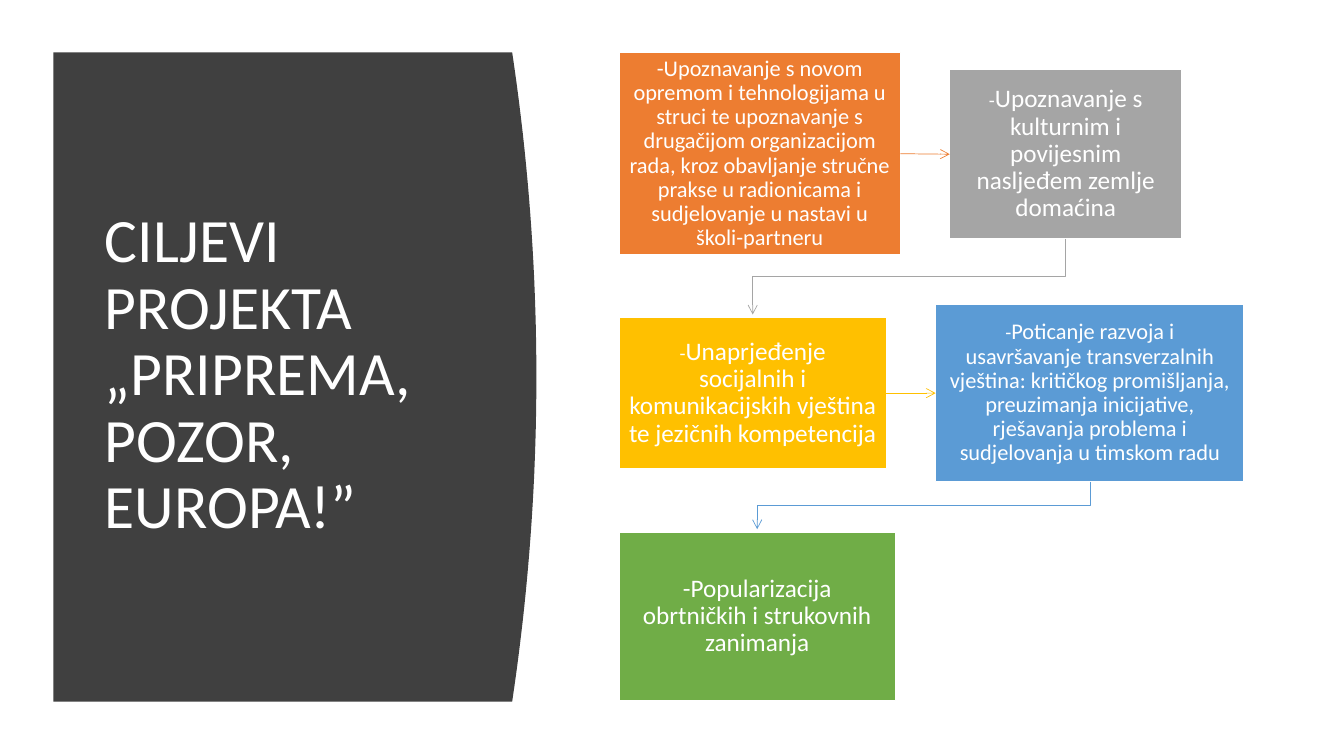
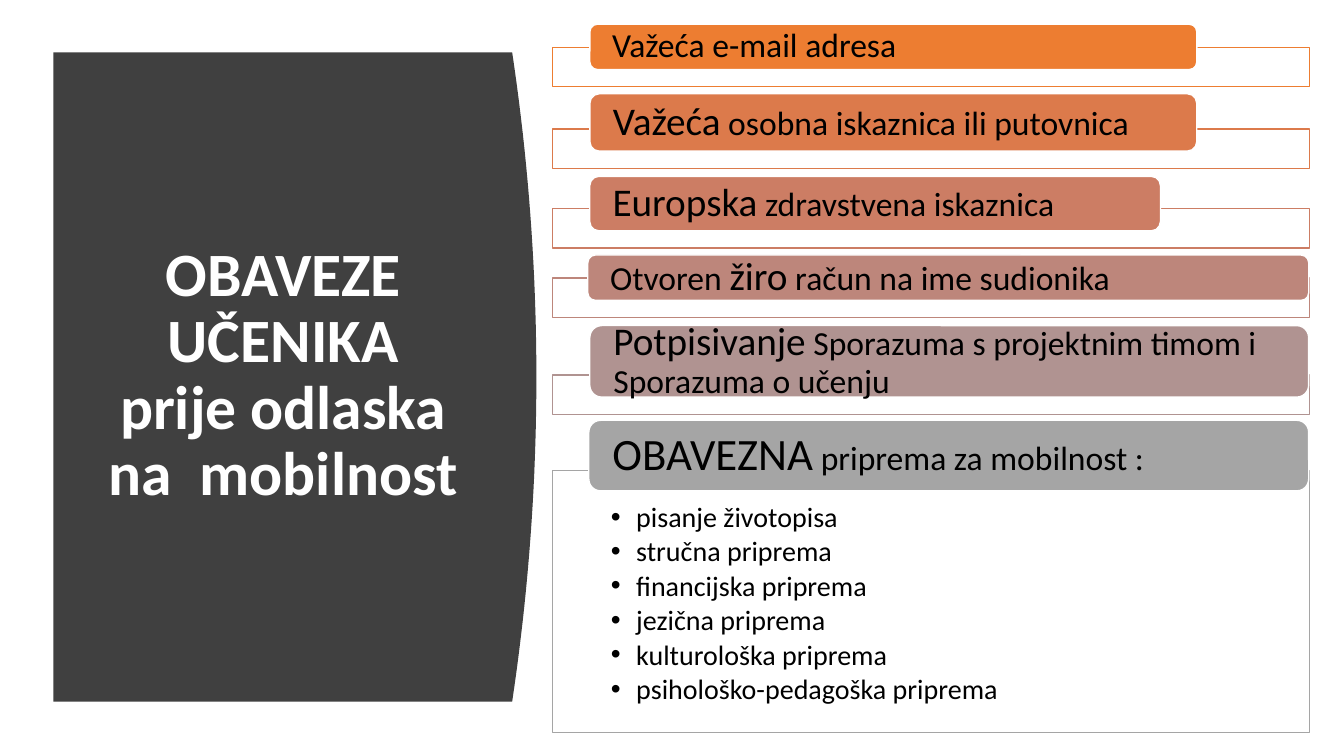
from pptx import Presentation
from pptx.dml.color import RGBColor
from pptx.enum.shapes import MSO_CONNECTOR, MSO_SHAPE
from pptx.enum.text import MSO_ANCHOR, MSO_AUTO_SIZE, PP_ALIGN
from pptx.oxml.ns import qn
from pptx.util import Inches, Pt
from lxml import etree

STRAIGHT, ELBOW = MSO_CONNECTOR.STRAIGHT, MSO_CONNECTOR.ELBOW
RECTANGLE, ROUNDED = MSO_SHAPE.RECTANGLE, MSO_SHAPE.ROUNDED_RECTANGLE
LEFT, CENTER = PP_ALIGN.LEFT, PP_ALIGN.CENTER
TOP, MIDDLE = MSO_ANCHOR.TOP, MSO_ANCHOR.MIDDLE
NO_AUTOFIT = MSO_AUTO_SIZE.NONE
SIDE_TOP, SIDE_LEFT, SIDE_BOTTOM, SIDE_RIGHT = range(4)

FONT = "Calibri"
WHITE, BLACK, CHARCOAL = "FFFFFF", "000000", "404040"
ORANGE, GREY, YELLOW, BLUE, GREEN = "ED7D31", "A5A5A5", "FFC000", "5B9BD5", "70AD47"

GOALS = [
    (ORANGE, (6.14, 0.52, 2.79, 2.01),
     [("-Upoznavanje s novom opremom i tehnologijama u struci te upoznavanje s drugačijom "
       "organizacijom rada, kroz obavljanje stručne prakse u radionicama i sudjelovanje "
       "u nastavi u školi-partneru", 16)]),
    (GREY, (9.42, 0.69, 2.3, 1.68),
     [("-", 14), ("Upoznavanje s kulturnim i povijesnim nasljeđem zemlje domaćina", 18)]),
    (YELLOW, (6.14, 3.15, 2.65, 1.5),
     [("-", 14), ("Unaprjeđenje socijalnih i komunikacijskih vještina te jezičnih "
                  "kompetencija", 18)]),
    (BLUE, (9.28, 3.02, 3.06, 1.76),
     [("-", 14), ("Poticanje razvoja i usavršavanje transverzalnih vještina: kritičkog "
                  "promišljanja, preuzimanja inicijative, rješavanja problema i "
                  "sudjelovanja u timskom radu", 16)]),
    (GREEN, (6.14, 5.28, 2.74, 1.67),
     [("-Popularizacija obrtničkih i strukovnih zanimanja", 18)]),
]

FRAME_LEFT, FRAME_WIDTH, FRAME_HEIGHT = 5.48, 7.51, 0.39
DUTIES = [
    (ORANGE, 0.47, (5.85, 0.24, 6.02, 0.45), [("Važeća e-mail adresa", 24)]),
    ("DC7A4B", 1.28, (5.85, 0.93, 6.02, 0.57),
     [("Važeća", 28), (" osobna iskaznica ili putovnica", 24)]),
    ("CC7D64", 2.07, (5.85, 1.75, 5.66, 0.54),
     [("Europska", 28), (" zdravstvena iskaznica", 24)]),
    ("BD867B", 2.76, (5.83, 2.53, 7.15, 0.45),
     [("Otvoren ", 24), ("žiro", 28), (" račun na ime sudionika", 24)]),
    ("B09391", 3.72, (5.85, 3.23, 7.13, 0.71),
     [("Potpisivanje", 28), (" Sporazuma s projektnim timom i Sporazuma o učenju", 24)]),
]
PREPARATION_HEADER = (5.84, 4.17, 7.14, 0.7)
PREPARATION_FRAME = (FRAME_LEFT, 4.67, FRAME_WIDTH, 2.6)
PREPARATIONS = ["pisanje životopisa", "stručna priprema", "financijska priprema",
                "jezična priprema", "kulturološka priprema", "psihološko-pedagoška priprema"]


def color(hex_code):
    """Turn a hex string into a colour."""
    return RGBColor.from_string(hex_code)


def place(shape, box):
    """Move and size a shape to a box in inches."""
    shape.left, shape.top, shape.width, shape.height = map(Inches, box)


def set_frame(shape, anchor, margins):
    """Set wrapping, anchor and margins of a shape's text and return its frame."""
    frame = shape.text_frame
    frame.word_wrap = True
    frame.auto_size = NO_AUTOFIT
    frame.vertical_anchor = anchor
    (frame.margin_left, frame.margin_top,
     frame.margin_right, frame.margin_bottom) = map(Inches, margins)
    return frame


def format_paragraph(paragraph, alignment, space_after=0):
    """Set alignment and spacing of a paragraph."""
    paragraph.alignment = alignment
    paragraph.line_spacing = 0.9
    paragraph.space_before = Pt(0)
    paragraph.space_after = Pt(space_after)


def add_run(paragraph, text, size, hex_code, bold=False):
    """Add one formatted run."""
    run = paragraph.add_run()
    run.text = text
    run.font.name, run.font.size, run.font.bold = FONT, Pt(size), bold
    run.font.color.rgb = color(hex_code)


def add_block(slide, kind, box, fill, line):
    """Add a filled and outlined preset shape."""
    shape = slide.shapes.add_shape(kind, *map(Inches, box))
    shape.shadow.inherit = False
    shape.fill.solid()
    shape.fill.fore_color.rgb = color(fill)
    shape.line.color.rgb = color(line)
    shape.line.width = Pt(1)
    return shape


def add_text_block(slide, kind, box, fill, runs, hex_code, alignment, margins):
    """Add a white-edged block with one paragraph of runs."""
    shape = add_block(slide, kind, box, fill, WHITE)
    paragraph = set_frame(shape, MIDDLE, margins).paragraphs[0]
    format_paragraph(paragraph, alignment)
    for text, size in runs:
        add_run(paragraph, text, size, hex_code)
    return shape


def add_header(slide, box, fill, runs):
    """Add a rounded header bar."""
    add_text_block(slide, ROUNDED, box, fill, runs, BLACK, LEFT, (0.2, 0, 0.2, 0))


def add_panel(slide):
    """Add the dark panel with its bulging right edge behind everything else."""
    left, top, bottom, edge, bulge, steps = 0.53, 0.52, 6.96, 5.08, 0.24, 40
    points = []
    for step in range(steps + 1):
        offset = 2 * step / steps - 1
        points.append((Inches(edge + bulge * (1 - offset ** 2)),
                       Inches(top + (bottom - top) * step / steps)))
    builder = slide.shapes.build_freeform(Inches(left), Inches(top))
    builder.add_line_segments(points + [(Inches(left), Inches(bottom))], close=True)
    panel = builder.convert_to_shape()
    panel.shadow.inherit = False
    panel.fill.solid()
    panel.fill.fore_color.rgb = color(CHARCOAL)
    panel.line.fill.background()
    slide.shapes._spTree.insert(2, panel._element)


def add_slide(presentation, layout_index, title_lines, alignment, bold):
    """Add a slide with the dark panel and its title."""
    slide = presentation.slides.add_slide(presentation.slide_layouts[layout_index])
    add_panel(slide)
    title = slide.shapes.title
    place(title, (0.94, 1.11, 3.74, 5.24))
    paragraph = set_frame(title, MIDDLE, (0.1, 0.05, 0.1, 0.05)).paragraphs[0]
    format_paragraph(paragraph, alignment)
    for index, line in enumerate(title_lines):
        if index:
            paragraph.add_line_break()
        add_run(paragraph, line, 44, WHITE, bold)
    return slide


def style_arrow(connector, hex_code):
    """Give a connector a thin line with an open arrowhead and no shadow."""
    connector.line.color.rgb = color(hex_code)
    connector.line.width = Pt(0.5)
    etree.SubElement(connector.line._get_or_add_ln(), qn("a:tailEnd"), type="arrow")
    etree.SubElement(connector._element.spPr, qn("a:effectLst"))


def add_side_arrow(slide, source, target, hex_code):
    """Join two neighbouring blocks with a straight arrow."""
    connector = slide.shapes.add_connector(STRAIGHT, 0, 0, 0, 0)
    connector.begin_connect(source, SIDE_RIGHT)
    connector.end_connect(target, SIDE_LEFT)
    style_arrow(connector, hex_code)


def add_return_arrow(slide, source, target, hex_code):
    """Lead from the bottom of a block down and left to the top of the next."""
    start_x, start_y = source.left + source.width // 2, source.top + source.height
    end_x, end_y = target.left + target.width // 2, target.top - Inches(0.03)
    center_x, center_y = (start_x + end_x) // 2, (start_y + end_y) // 2
    half_drop, half_run = (end_y - start_y) // 2, (start_x - end_x) // 2
    connector = slide.shapes.add_connector(
        ELBOW, center_x - half_drop, center_y - half_run,
        center_x + half_drop, center_y + half_run)
    connector._element.spPr.find(qn("a:xfrm")).set("rot", "5400000")
    style_arrow(connector, hex_code)


def fill_list(body, items):
    """Fill the outlined body placeholder with a bulleted list."""
    place(body, PREPARATION_FRAME)
    body.line.color.rgb = color(GREY)
    body.line.width = Pt(1)
    frame = set_frame(body, TOP, (0.58, 0.32, 0.58, 0.16))
    for index, item in enumerate(items):
        paragraph = frame.add_paragraph() if index else frame.paragraphs[0]
        format_paragraph(paragraph, LEFT, 3)
        properties = paragraph._p.get_or_add_pPr()
        properties.set("marL", str(Inches(0.25)))
        properties.set("indent", str(-Inches(0.25)))
        etree.SubElement(properties, qn("a:buChar"), char="•")
        add_run(paragraph, item, 20, BLACK)


def build_goals(presentation):
    """Build the slide with the chain of project goals."""
    slide = add_slide(presentation, 5, ["CILJEVI PROJEKTA „PRIPREMA, POZOR, EUROPA!”"],
                      LEFT, False)
    blocks = [add_text_block(slide, RECTANGLE, box, fill, runs, WHITE, CENTER,
                             (0.1, 0.11, 0.1, 0.11))
              for fill, box, runs in GOALS]
    for index, (source, target) in enumerate(zip(blocks, blocks[1:])):
        add_arrow = add_return_arrow if index % 2 else add_side_arrow
        add_arrow(slide, source, target, GOALS[index][0])


def build_duties(presentation):
    """Build the slide with the students' duties."""
    slide = add_slide(presentation, 1, ["OBAVEZE UČENIKA", "prije odlaska na  mobilnost"],
                      CENTER, True)
    for accent, frame_top, header_box, runs in DUTIES:
        add_block(slide, RECTANGLE, (FRAME_LEFT, frame_top, FRAME_WIDTH, FRAME_HEIGHT),
                  WHITE, accent)
        add_header(slide, header_box, accent, runs)
    fill_list(slide.placeholders[1], PREPARATIONS)
    add_header(slide, PREPARATION_HEADER, GREY,
               [("OBAVEZNA", 32), (" priprema za mobilnost :", 24)])


def main():
    """Build and save the presentation."""
    presentation = Presentation()
    presentation.slide_width, presentation.slide_height = Inches(13.33), Inches(7.5)
    build_goals(presentation)
    build_duties(presentation)
    presentation.save("out.pptx")


if __name__ == "__main__":
    main()
